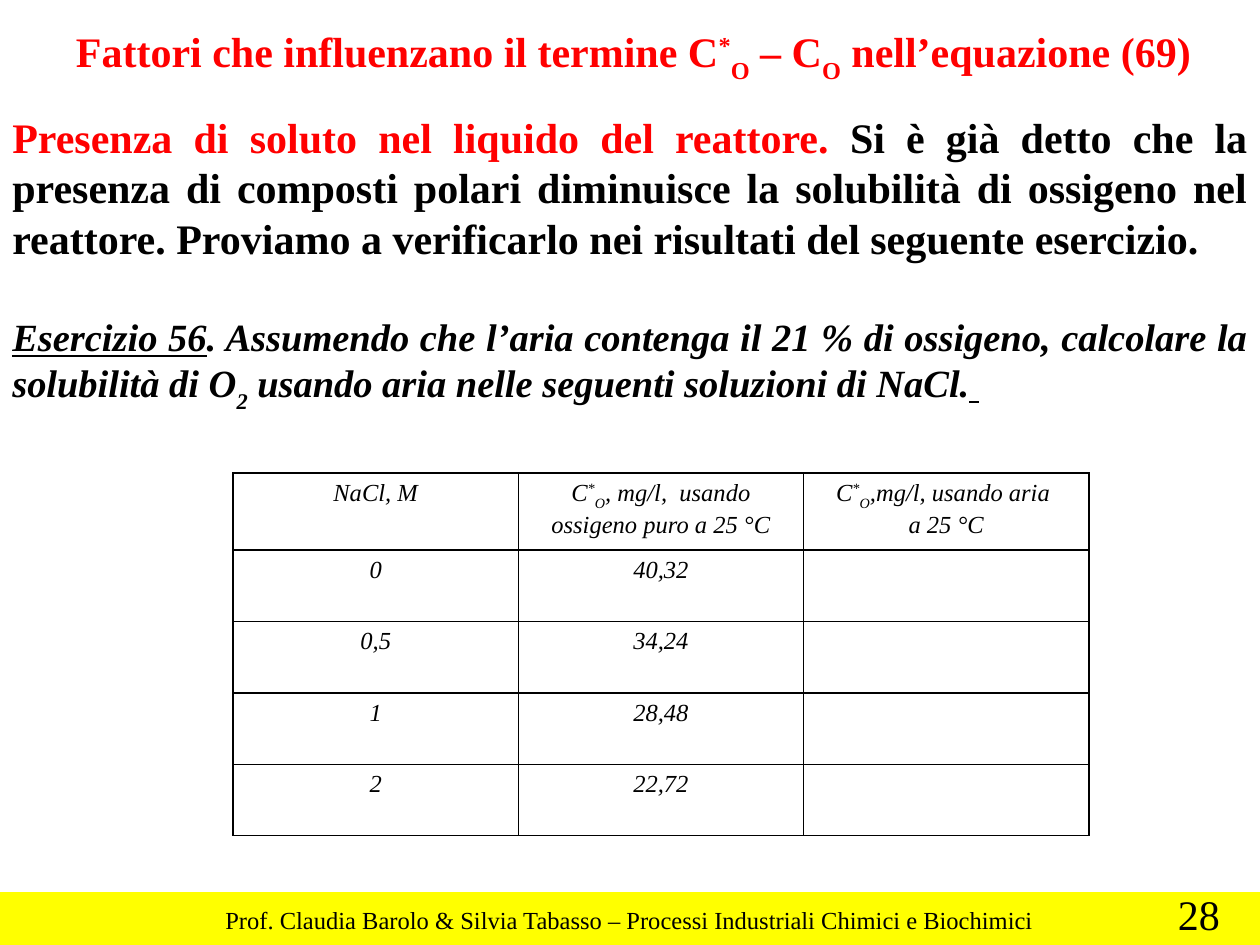
import pptx
import pptx.dml.color
import pptx.enum.shapes
import pptx.enum.text
import pptx.oxml
import pptx.oxml.ns
import pptx.util
from pptx.util import Pt

RED = pptx.dml.color.RGBColor(0xFF, 0x00, 0x00)
BLACK = pptx.dml.color.RGBColor(0x00, 0x00, 0x00)
YELLOW = pptx.dml.color.RGBColor(0xFF, 0xFF, 0x00)
FONT = "Times New Roman"
ALIGN = pptx.enum.text.PP_ALIGN
SUPERSCRIPT, SUBSCRIPT = 30000, -30000
CONCENTRATION = [("C",), ("*", SUPERSCRIPT), ("O", SUBSCRIPT)]
NACL_ROWS = [("0", "40,32"), ("0,5", "34,24"), ("1", "28,48"), ("2", "22,72")]


def add_run(paragraph, text, baseline=0, size=24, color=BLACK,
            bold=False, italic=False, underline=False):
    run = paragraph.add_run()
    run.text = text
    font = run.font
    font.name, font.size, font.color.rgb = FONT, Pt(size), color
    font.bold, font.italic, font.underline = bold, italic, underline
    if baseline:
        run._r.get_or_add_rPr().set("baseline", str(baseline))


def add_text_box(slide, left, top, width, height, wrap=False):
    """Add an empty text box and return its text frame."""
    text_frame = slide.shapes.add_textbox(
        Pt(left), Pt(top), Pt(width), Pt(height)).text_frame
    text_frame.word_wrap = wrap
    return text_frame


def add_footer(slide, left, top, width, height):
    band = slide.shapes.add_shape(
        pptx.enum.shapes.MSO_SHAPE.RECTANGLE,
        Pt(left), Pt(top), Pt(width), Pt(height))
    band.shadow.inherit = False
    band.fill.solid()
    band.fill.fore_color.rgb = YELLOW
    band.line.fill.background()
    credit = add_text_box(slide, left + 121.7, top + 4, 483, 24.5)
    add_run(credit.paragraphs[0],
            "Prof. Claudia Barolo & Silvia Tabasso – "
            "Processi Industriali Chimici e Biochimici", size=14)
    number = add_text_box(slide, left + 666, top - 5.8, 44, 36, wrap=True)
    add_run(number.paragraphs[0], "28")


def add_title(slide, left, top, width, height):
    paragraph = add_text_box(slide, left, top, width, height).paragraphs[0]
    paragraph.alignment = ALIGN.CENTER
    pieces = [("Fattori che influenzano il termine C",), *CONCENTRATION[1:],
              (" – C",), ("O", SUBSCRIPT), (" nell’equazione (69)",)]
    for piece in pieces:
        add_run(paragraph, *piece, color=RED, bold=True)


def add_body(slide, left, top, width, height):
    text_frame = add_text_box(slide, left, top, width, height, wrap=True)
    solute = text_frame.paragraphs[0]
    solute.alignment = ALIGN.JUSTIFY
    add_run(solute, "Presenza di soluto nel liquido del reattore.",
            color=RED, bold=True)
    add_run(solute, " Si è già detto che la presenza di composti polari "
            "diminuisce la solubilità di ossigeno nel reattore. Proviamo a "
            "verificarlo nei risultati del seguente esercizio.", bold=True)

    exercise = text_frame.add_paragraph()
    exercise.alignment = ALIGN.JUSTIFY
    exercise.space_before = Pt(28.8)
    pieces = [
        ("Esercizio 56", 0, True),
        (". Assumendo che l’aria contenga il 21 % di ossigeno, "
         "calcolare la solubilità di O", 0, False),
        ("2", SUBSCRIPT, False),
        (" usando aria nelle seguenti soluzioni di NaCl.", 0, False),
        (" ", 0, True),
    ]
    for text, baseline, underline in pieces:
        add_run(exercise, text, baseline, size=22, bold=True, italic=True,
                underline=underline)


def add_cell_borders(cell):
    properties = cell._tc.get_or_add_tcPr()
    namespace = pptx.oxml.ns.nsdecls("a")
    for position, side in enumerate(("lnL", "lnR", "lnT", "lnB")):
        properties.insert(position, pptx.oxml.parse_xml(
            f'<a:{side} {namespace} w="{Pt(1)}"><a:solidFill>'
            f'<a:srgbClr val="{BLACK}"/></a:solidFill></a:{side}>'))


def add_solubility_table(slide, left, top, width, header_height, row_height):
    header = [
        [[("NaCl, M",)]],
        [[*CONCENTRATION, (", mg/l,  usando ossigeno puro a 25 °C",)]],
        [[*CONCENTRATION, (",mg/l, usando aria ",)], [("a 25 °C",)]],
    ]
    # Each cell is a list of paragraphs, each paragraph a list of runs.
    rows = [header] + [[[[(value,)]] for value in values] + [[]]
                       for values in NACL_ROWS]
    heights = [header_height] + [row_height] * len(NACL_ROWS)
    table = slide.shapes.add_table(
        len(rows), len(header), Pt(left), Pt(top), Pt(width),
        Pt(sum(heights))).table
    table.first_row = table.horz_banding = False
    for column in table.columns:
        column.width = Pt(width / len(header))
    for row_index, (height, cells) in enumerate(zip(heights, rows)):
        table.rows[row_index].height = Pt(height)
        for column_index, paragraphs in enumerate(cells):
            cell = table.cell(row_index, column_index)
            cell.fill.background()
            add_cell_borders(cell)
            for index, pieces in enumerate(paragraphs):
                text_frame = cell.text_frame
                paragraph = (text_frame.add_paragraph() if index
                             else text_frame.paragraphs[0])
                paragraph.alignment = ALIGN.CENTER
                for piece in pieces:
                    add_run(paragraph, *piece, size=14, italic=True)


def main():
    presentation = pptx.Presentation()
    presentation.slide_width, presentation.slide_height = Pt(720), Pt(540)
    slide = presentation.slides.add_slide(presentation.slide_layouts[6])
    add_footer(slide, 0, 509.8, 720, 30.2)
    add_body(slide, 0, 60.2, 720, 186)
    add_title(slide, 34, 10.8, 656, 36)
    add_solubility_table(slide, 133.2, 270.4, 489, 44, 40.8)
    presentation.save("out.pptx")


if __name__ == "__main__":
    main()
